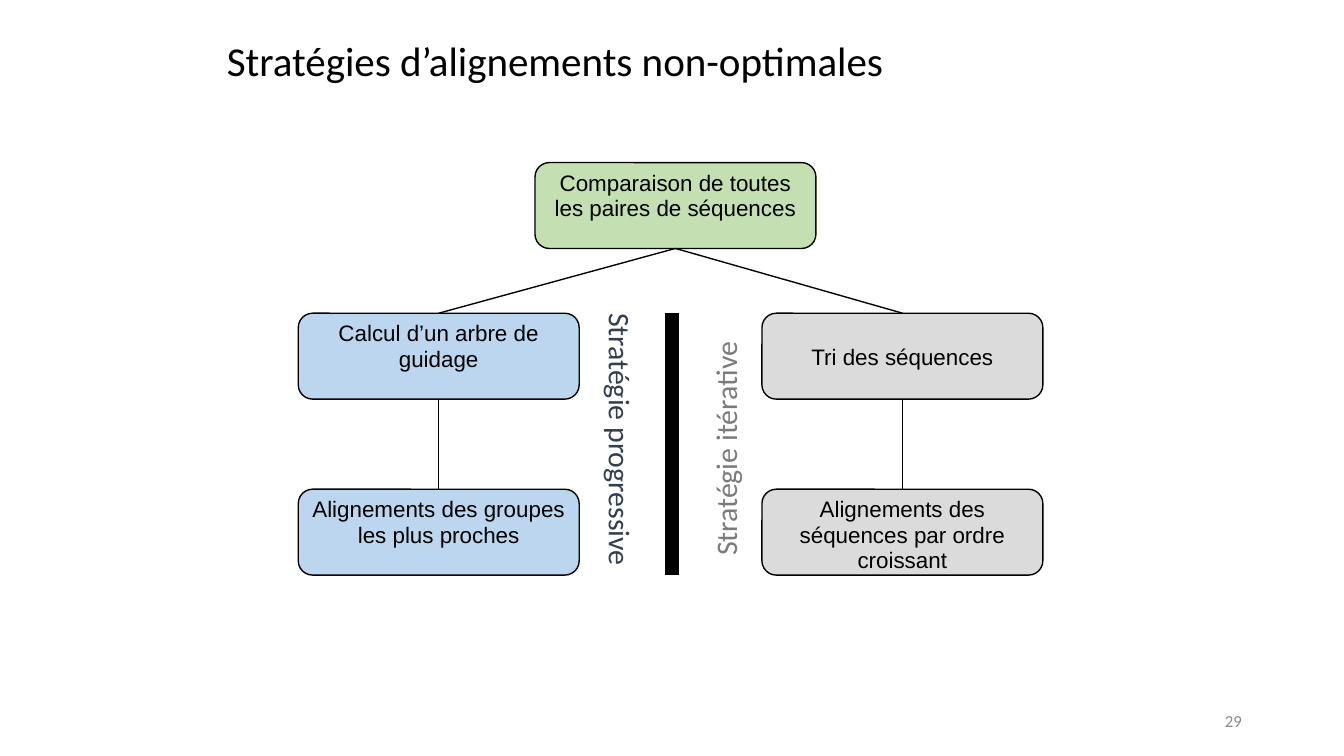
"""Build the slide on non-optimal alignment strategies."""
from dataclasses import dataclass

from lxml import etree
from pptx import Presentation
from pptx.dml.color import RGBColor
from pptx.enum.shapes import MSO_CONNECTOR, MSO_SHAPE
from pptx.enum.text import MSO_ANCHOR, MSO_AUTO_SIZE, PP_ALIGN
from pptx.oxml.ns import qn
from pptx.util import Pt

ROUND = MSO_SHAPE.ROUNDED_RECTANGLE
LINE = MSO_CONNECTOR.STRAIGHT
LEFT, MID, RIGHT = PP_ALIGN.LEFT, PP_ALIGN.CENTER, PP_ALIGN.RIGHT
TOP, CENTER = MSO_ANCHOR.TOP, MSO_ANCHOR.MIDDLE
FIXED = MSO_AUTO_SIZE.NONE

COLORS = {
    "black": "000000", "green": "C4E0B2", "blue": "BBD6EE", "gray": "DBDBDB",
    "navy": "323F4F", "ash": "7B7B7B", "page": "888888",
}
WIDE, HIGH = 150.5, 46
ROOT_X, LEFT_X, RIGHT_X = 286.6, 159.8, 408.2
ROWS = (87.1, 167.8, 262.1)


@dataclass
class Node:
    text: str
    x: float
    y: float
    fill: str
    inset: float = 2.2

    @property
    def top(self) -> tuple[float, float]:
        """Return the middle of the top edge."""
        return self.x + WIDE / 2, self.y

    @property
    def base(self) -> tuple[float, float]:
        """Return the middle of the bottom edge."""
        return self.x + WIDE / 2, self.y + HIGH


@dataclass
class Label:
    text: str
    x: float
    y: float
    width: float
    height: float
    size: float
    color: str
    turn: float = 0
    align: PP_ALIGN = LEFT
    anchor: MSO_ANCHOR = TOP


def write(shape, text: str, size: float, color: str, font: str, align: PP_ALIGN,
          anchor: MSO_ANCHOR, inset: float, space: float = 1) -> None:
    """Fill a shape with one formatted paragraph."""
    frame = shape.text_frame
    frame.text = text
    frame.word_wrap = True
    frame.auto_size = FIXED
    frame.vertical_anchor = anchor
    frame.margin_left = frame.margin_right = Pt(5)
    frame.margin_top, frame.margin_bottom = Pt(inset), Pt(2.7)
    para = frame.paragraphs[0]
    para.alignment = align
    para.line_spacing = space
    for run in para.runs:
        run.font.size = Pt(size)
        run.font.name = font
        run.font.color.rgb = RGBColor.from_string(COLORS[color])


def draw_node(slide, node: Node) -> None:
    """Draw a rounded step box."""
    box = slide.shapes.add_shape(
        ROUND, Pt(node.x), Pt(node.y), Pt(WIDE), Pt(HIGH))
    box.shadow.inherit = False
    box.fill.solid()
    box.fill.fore_color.rgb = RGBColor.from_string(COLORS[node.fill])
    box.line.color.rgb = RGBColor.from_string(COLORS["black"])
    box.line.width = Pt(0.75)
    write(box, node.text, 12, "black", "Arial", MID, TOP, node.inset, 0.94)


def draw_line(slide, start: tuple[float, float], end: tuple[float, float],
              width: float = 0.75) -> None:
    """Draw a straight black line between two points."""
    line = slide.shapes.add_connector(LINE, *(Pt(v) for v in start + end))
    line.line.color.rgb = RGBColor.from_string(COLORS["black"])
    line.line.width = Pt(width)
    etree.SubElement(line._element.spPr, qn("a:effectLst"))


def draw_label(slide, label: Label) -> None:
    """Draw a plain text box, turned if asked."""
    box = slide.shapes.add_textbox(
        Pt(label.x), Pt(label.y), Pt(label.width), Pt(label.height))
    box.rotation = label.turn
    write(box, label.text, label.size, label.color, "Calibri",
          label.align, label.anchor, 2.7)


def main() -> None:
    """Build and save the slide."""
    deck = Presentation()
    deck.slide_width, deck.slide_height = Pt(720), Pt(405)
    slide = deck.slides.add_slide(deck.slide_layouts[5])

    title = slide.shapes.title
    title.left, title.top = Pt(116.6), Pt(15.8)
    title.width, title.height = Pt(497.5), Pt(36)
    write(title, "Stratégies d’alignements non-optimales", 22, "black",
          "Calibri", LEFT, CENTER, 2.7, 0.9)

    root = Node("Comparaison de toutes les paires de séquences",
                ROOT_X, ROWS[0], "green")
    tree = Node("Calcul d’un arbre de guidage", LEFT_X, ROWS[1], "blue")
    groups = Node("Alignements des groupes les plus proches",
                  LEFT_X, ROWS[2], "blue")
    sort = Node("Tri des séquences", RIGHT_X, ROWS[1], "gray", 15.2)
    order = Node("Alignements des séquences par ordre croissant",
                 RIGHT_X, ROWS[2], "gray")
    for node in (root, tree, groups, sort, order):
        draw_node(slide, node)
    for above, below in ((root, tree), (root, sort), (tree, groups), (sort, order)):
        draw_line(slide, above.base, below.top)
    draw_line(slide, (360, ROWS[1]), (360, ROWS[2] + HIGH), 7)

    for label in (
        Label("Stratégie progressive", 257, 225.4, 150.5, 25.2, 16, "navy", 90),
        Label("Stratégie itérative", 324, 225.4, 129.6, 25.2, 16, "ash", 270),
        Label("29", 508.3, 375.1, 162, 21.6, 9, "page", 0, RIGHT, CENTER),
    ):
        draw_label(slide, label)
    deck.save("out.pptx")


if __name__ == "__main__":
    main()
